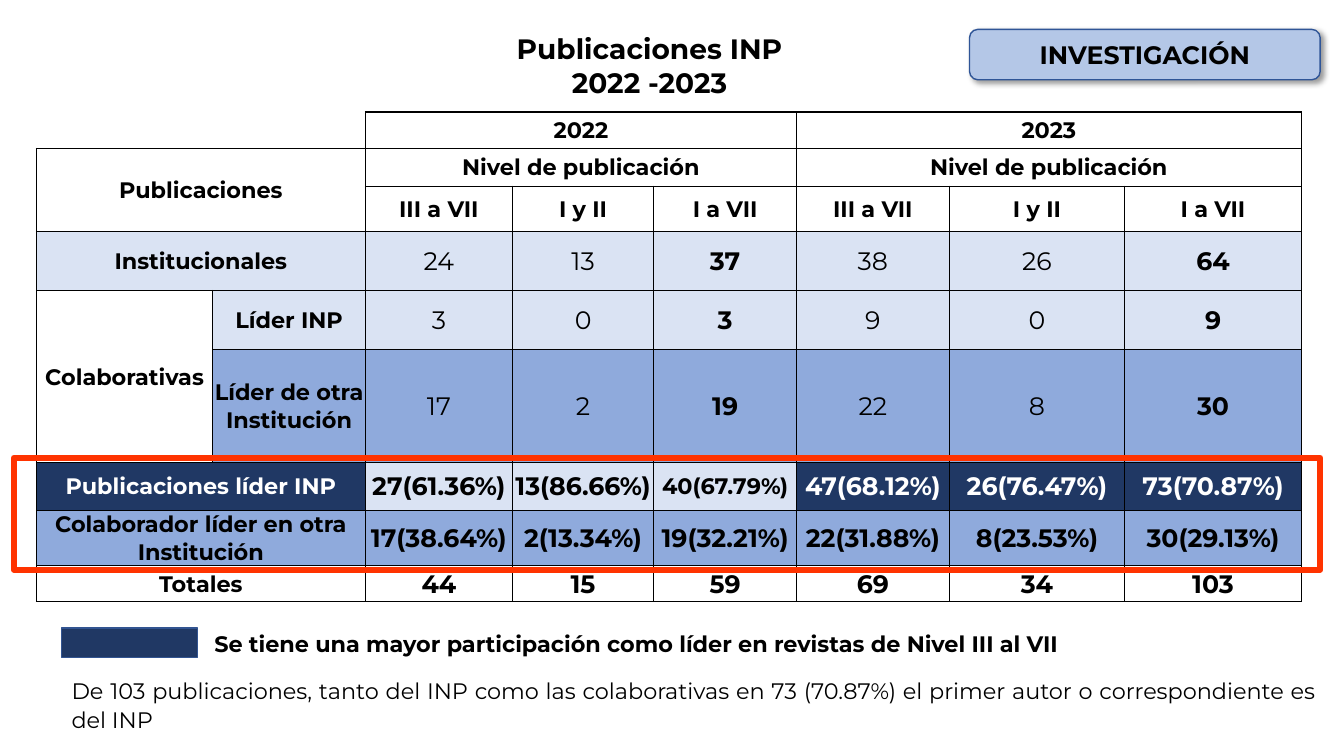
from lxml import etree
from pptx import Presentation
from pptx.dml.color import RGBColor
from pptx.enum.shapes import MSO_SHAPE
from pptx.enum.text import MSO_ANCHOR, PP_ALIGN
from pptx.oxml.ns import qn
from pptx.util import Pt

RECT = MSO_SHAPE.RECTANGLE
ROUNDED = MSO_SHAPE.ROUNDED_RECTANGLE
MIDDLE = MSO_ANCHOR.MIDDLE
LEFT, CENTER, JUSTIFY = PP_ALIGN.LEFT, PP_ALIGN.CENTER, PP_ALIGN.JUSTIFY
FONT = "Montserrat"
PLAIN_TABLE_STYLE = "{2D5ABB26-0587-4C30-8999-92F81FD0307C}"
COLORS = {
    "black": "000000",
    "white": "FFFFFF",
    "pale": "DAE3F3",
    "blue": "8FAADC",
    "navy": "203864",
    "navy_edge": "325491",
    "badge": "B4C7E7",
    "badge_edge": "2F5597",
    "red": "FF3300",
}

COLUMN_WIDTHS = [126, 109, 105, 101, 102, 109, 125.5, 126]
ROW_HEIGHTS = [26, 27, 32.5, 42, 42, 81, 34, 39, 25.5]
FIRST_VALUE_COLUMN = 2
TOTAL_COLUMNS = (4, 7)
MERGES = [
    (0, 2, 0, 4), (0, 5, 0, 7), (1, 0, 2, 1), (1, 2, 1, 4), (1, 5, 1, 7),
    (3, 0, 3, 1), (4, 0, 5, 0), (6, 0, 6, 1), (7, 0, 7, 1), (8, 0, 8, 1),
]
LEVELS = ["III a VII", "I y II", "I a VII"]
HEADER_ROWS = [
    ["", "", "2022", "", "", "2023", "", ""],
    ["Publicaciones", "", "Nivel de publicación", "", "", "Nivel de publicación", "", ""],
    ["", "", *LEVELS, *LEVELS],
]
COUNT_ROWS = [
    (["Institucionales", "", "24", "13", "37", "38", "26", "64"], "pale"),
    (["Colaborativas", "Líder INP", "3", "0", "3", "9", "0", "9"], "pale"),
    (["", "Líder de otra Institución", "17", "2", "19", "22", "8", "30"], "blue"),
]
SUMMARY_ROWS = [
    (["Publicaciones líder INP", "", "27(61.36%)", "13(86.66%)", "40(67.79%)",
      "47(68.12%)", "26(76.47%)", "73(70.87%)"], "navy"),
    (["Colaborador líder en otra Institución", "", "17(38.64%)", "2(13.34%)",
      "19(32.21%)", "22(31.88%)", "8(23.53%)", "30(29.13%)"], "blue"),
    (["Totales", "", "44", "15", "59", "69", "34", "103"], "white"),
]


def rgb(color):
    return RGBColor.from_string(COLORS[color])


def write(frame, text, size=16, color="black", bold=True, align=CENTER, spacing=None):
    frame.word_wrap = True
    for index, line in enumerate(text.split("\n")):
        paragraph = frame.add_paragraph() if index else frame.paragraphs[0]
        paragraph.alignment = align
        if spacing:
            paragraph.line_spacing = spacing
        run = paragraph.add_run()
        run.text = line
        run.font.name = FONT
        run.font.size = Pt(size)
        run.font.bold = bold
        run.font.color.rgb = rgb(color)


def add_box(slide, preset, bounds, fill=None, line=None, line_width=1):
    box = slide.shapes.add_shape(preset, *map(Pt, bounds))
    box.shadow.inherit = False
    if fill:
        box.fill.solid()
        box.fill.fore_color.rgb = rgb(fill)
    else:
        box.fill.background()
    if line:
        box.line.color.rgb = rgb(line)
        box.line.width = Pt(line_width)
    else:
        box.line.fill.background()
    box.text_frame.vertical_anchor = MIDDLE
    return box


def add_text(slide, bounds, text, **text_format):
    note = slide.shapes.add_textbox(*map(Pt, bounds))
    write(note.text_frame, text, **text_format)


def cast_shadow(box):
    effects = box._element.spPr.find(qn("a:effectLst"))
    shadow = etree.SubElement(
        effects, qn("a:outerShdw"), blurRad=str(Pt(4)), dist=str(Pt(3)),
        dir="2700000", algn="tl", rotWithShape="0")
    tint = etree.SubElement(shadow, qn("a:srgbClr"), val=COLORS["black"])
    etree.SubElement(tint, qn("a:alpha"), val="40000")


def draw_borders(cell, sides):
    properties = cell._tc.get_or_add_tcPr()
    for position, side in enumerate(sides):
        border = etree.Element(qn(f"a:ln{side}"), w=str(Pt(1)))
        fill = etree.SubElement(border, qn("a:solidFill"))
        etree.SubElement(fill, qn("a:srgbClr"), val=COLORS["black"])
        properties.insert(position, border)


def borders_of(row, column):
    if row == 0 and column < FIRST_VALUE_COLUMN:
        return "RB" if column == 1 else "B"
    return "LRTB"


def style_cell(cell, fill):
    cell.margin_left = cell.margin_right = cell.margin_top = Pt(0.75)
    cell.margin_bottom = Pt(0)
    cell.vertical_anchor = MIDDLE
    if fill:
        cell.fill.solid()
        cell.fill.fore_color.rgb = rgb(fill)
    else:
        cell.fill.background()


def table_content():
    for labels in HEADER_ROWS:
        yield [(label, None, {}) for label in labels]
    for texts, fill in COUNT_ROWS:
        cells = []
        for column, text in enumerate(texts):
            if column < FIRST_VALUE_COLUMN:
                collaborative = column == 0 and texts[1] != "" 
                cells.append((text, "white" if collaborative else fill, {}))
            else:
                cells.append((text, fill, {"size": 18, "bold": column in TOTAL_COLUMNS}))
        yield cells
    for texts, fill in SUMMARY_ROWS:
        cells = []
        for column, text in enumerate(texts):
            size = 16 if column < FIRST_VALUE_COLUMN or text == "40(67.79%)" else 18
            shade = "pale" if fill == "navy" and column in (2, 3, 4) else fill
            color = "white" if shade == "navy" else "black"
            cells.append((text, shade, {"size": size, "color": color}))
        yield cells


def add_publications_table(slide):
    bounds = (26, 80, sum(COLUMN_WIDTHS), sum(ROW_HEIGHTS))
    table = slide.shapes.add_table(
        len(ROW_HEIGHTS), len(COLUMN_WIDTHS), *map(Pt, bounds)).table
    table.first_row = table.horz_banding = False
    table._tbl.tblPr.find(qn("a:tableStyleId")).text = PLAIN_TABLE_STYLE
    for column, width in zip(table.columns, COLUMN_WIDTHS):
        column.width = Pt(width)
    for row, height in zip(table.rows, ROW_HEIGHTS):
        row.height = Pt(height)
    for row, cells in enumerate(table_content()):
        for column, (text, fill, text_format) in enumerate(cells):
            cell = table.cell(row, column)
            style_cell(cell, fill)
            draw_borders(cell, borders_of(row, column))
            if text:
                write(cell.text_frame, text, **text_format)
    for top, left, bottom, right in MERGES:
        table.cell(top, left).merge(table.cell(bottom, right))


def main():
    deck = Presentation()
    deck.slide_width, deck.slide_height = Pt(960), Pt(540)
    slide = deck.slides.add_slide(deck.slide_layouts[6])

    title = add_box(slide, ROUNDED, (249, 12.5, 430, 68))
    write(title.text_frame, "Publicaciones INP\n2022 -2023", size=20)
    add_publications_table(slide)
    add_box(slide, RECT, (44, 448.5, 97, 21), fill="navy", line="navy_edge")
    add_text(slide, (146, 446.5, 773, 27),
             "Se tiene una mayor participación como líder en revistas de Nivel III al VII",
             align=LEFT)
    add_text(slide, (44, 478, 903.5, 48),
             "De 103 publicaciones, tanto del INP como las colaborativas en 73 (70.87%) "
             "el primer autor o correspondiente es del INP",
             bold=False, align=JUSTIFY, spacing=1.1)
    add_box(slide, RECT, (10, 327, 933, 80), line="red", line_width=4.5)
    badge = add_box(slide, ROUNDED, (692.5, 21, 250.5, 36), fill="badge", line="badge_edge")
    cast_shadow(badge)
    write(badge.text_frame, "INVESTIGACIÓN", size=18)

    deck.save("out.pptx")


if __name__ == "__main__":
    main()
